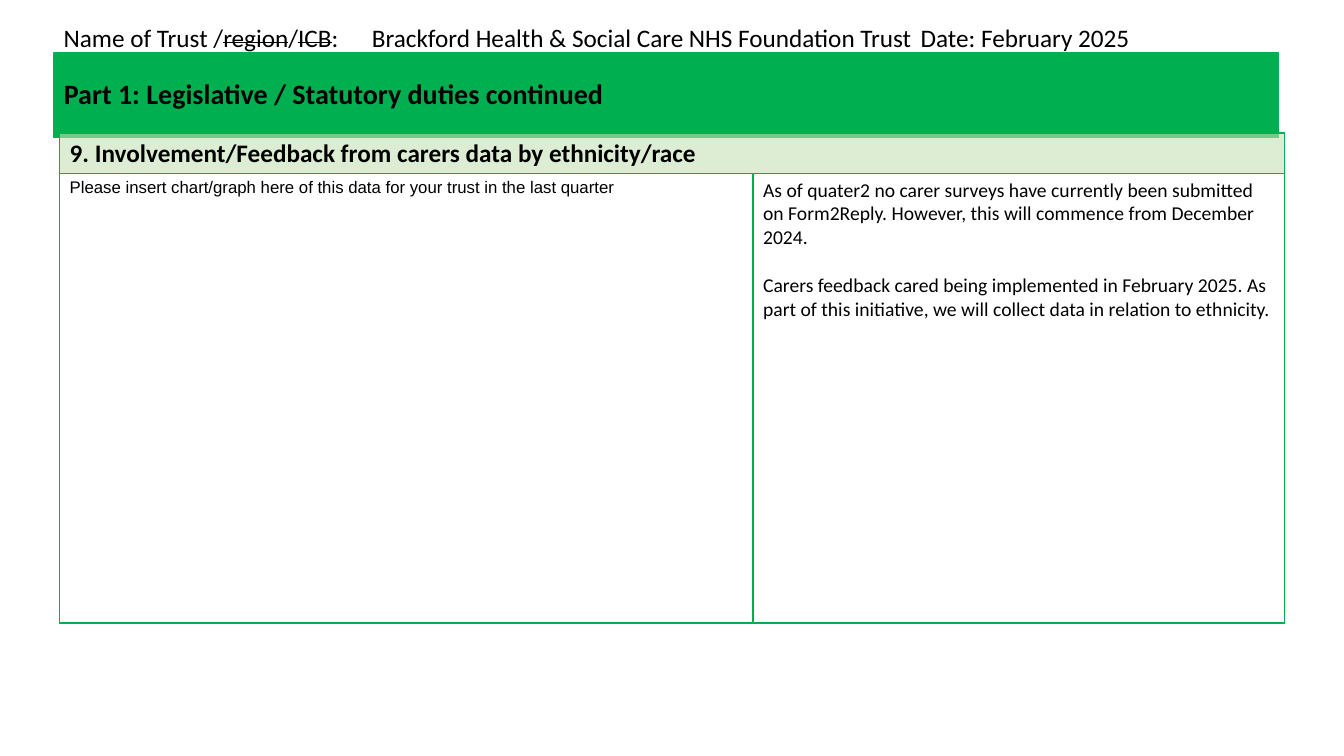
from lxml import etree
from pptx import Presentation
from pptx.dml.color import RGBColor
from pptx.enum.text import MSO_ANCHOR, MSO_AUTO_SIZE, PP_ALIGN
from pptx.oxml.ns import qn
from pptx.util import Inches, Pt

LEFT = PP_ALIGN.LEFT
MIDDLE = MSO_ANCHOR.MIDDLE
NO_FIT = MSO_AUTO_SIZE.NONE

GREEN = RGBColor(0x00, 0xB0, 0x50)
PALE_GREEN = RGBColor(0xC5, 0xE0, 0xB4)
BLACK = RGBColor(0x00, 0x00, 0x00)
BORDER_PT = 1
SIDES = ("a:lnL", "a:lnR", "a:lnT", "a:lnB")

HEADING = {"name": "Calibri", "size": Pt(20), "bold": True}
SUBHEADING = {"name": "Calibri", "size": Pt(18), "bold": True}
DETAILS = {"name": "Calibri", "size": Pt(18)}
PROMPT = {"name": "Arial", "size": Pt(12), "bold": False}
BODY = {"name": "Calibri", "size": Pt(14), "bold": False}


class TrustSlide:
    """Draws on one slide, measured on a grid of 100 columns by 100 rows."""

    def __init__(self, prs):
        self.col = prs.slide_width / 100
        self.row = prs.slide_height / 100
        self.s = prs.slides.add_slide(prs.slide_layouts[5])

    def box(self, x, y, w, h):
        return (round(x * self.col), round(y * self.row),
                round(w * self.col), round(h * self.row))

    def run(self, p, text, style, strike=False):
        r = p.add_run()
        r.text = text
        r.font.color.rgb = BLACK
        for key, value in style.items():
            setattr(r.font, key, value)
        if strike:
            r.font._element.set("strike", "sngStrike")

    def title(self, text, *place):
        sp = self.s.shapes.title
        sp.left, sp.top, sp.width, sp.height = self.box(*place)
        sp.fill.solid()
        sp.fill.fore_color.rgb = GREEN
        sp.line.color.rgb = GREEN
        sp.line.width = Pt(1.25)
        tf = sp.text_frame
        tf.auto_size, tf.vertical_anchor, tf.word_wrap = NO_FIT, MIDDLE, True
        p = tf.paragraphs[0]
        p.alignment, p.line_spacing = LEFT, 0.9
        self.run(p, text, HEADING)

    def text(self, runs, *place):
        tf = self.s.shapes.add_textbox(*self.box(*place)).text_frame
        tf.word_wrap = True
        p = tf.paragraphs[0]
        p.line_spacing, p.space_before = 0.9, Pt(10)
        for text, strike in runs:
            self.run(p, text, DETAILS, strike)

    def table(self, x, y, widths, heights):
        place = self.box(x, y, sum(widths), sum(heights))
        table = self.s.shapes.add_table(len(heights), len(widths), *place).table
        table.first_row = table.horz_banding = False
        for column, w in zip(table.columns, widths):
            column.width = round(w * self.col)
        for row, h in zip(table.rows, heights):
            row.height = round(h * self.row)
        for cell in table.iter_cells():
            self.border(cell)
            cell.fill.background()
        return table

    def border(self, cell):
        tc_pr = cell._tc.get_or_add_tcPr()
        for side in SIDES:
            ln = etree.SubElement(tc_pr, qn(side), w=str(Pt(BORDER_PT)))
            fill = etree.SubElement(ln, qn("a:solidFill"))
            etree.SubElement(fill, qn("a:srgbClr"), val=str(GREEN))

    def tint(self, cell, color, percent):
        cell.fill.solid()
        cell.fill.fore_color.rgb = color
        clr = cell._tc.tcPr.find(qn("a:solidFill")).find(qn("a:srgbClr"))
        etree.SubElement(clr, qn("a:alpha"), val=str(percent * 1000))

    def fill_cell(self, cell, paragraphs, style):
        tf = cell.text_frame
        for i, text in enumerate(paragraphs):
            p = tf.add_paragraph() if i else tf.paragraphs[0]
            p.space_before = Pt(17 if i else 0)
            self.run(p, text, style)


def main():
    prs = Presentation()
    prs.slide_width, prs.slide_height = Inches(13.33), Inches(7.5)
    s = TrustSlide(prs)
    s.title("Part 1: Legislative / Statutory duties continued", 4, 7, 91.13, 11.2)
    s.text([
        ("Name of Trust /", False),
        ("region", True),
        ("/", False),
        ("ICB", True),
        (":\t Brackford Health & Social Care NHS Foundation Trust"
         "\tDate: February 2025", False),
    ], 4, 2.8, 91.13, 4.8)

    table = s.table(4.43, 17.6, (51.6, 39.53), (5.07, 59.47))
    header = table.cell(0, 0)
    header.merge(table.cell(0, 1))
    s.tint(header, PALE_GREEN, 58)
    s.fill_cell(header, [
        "9. Involvement/Feedback from carers data by ethnicity/race"], SUBHEADING)
    s.fill_cell(table.cell(1, 0), [
        "Please insert chart/graph here of this data for your trust "
        "in the last quarter"], PROMPT)
    s.fill_cell(table.cell(1, 1), [
        "As of quater2 no carer surveys have currently been submitted on "
        "Form2Reply. However, this will commence from December 2024.",
        "Carers feedback cared being implemented in February 2025. As part of "
        "this initiative, we will collect data in relation to ethnicity.",
    ], BODY)
    prs.save("out.pptx")


if __name__ == "__main__":
    main()
